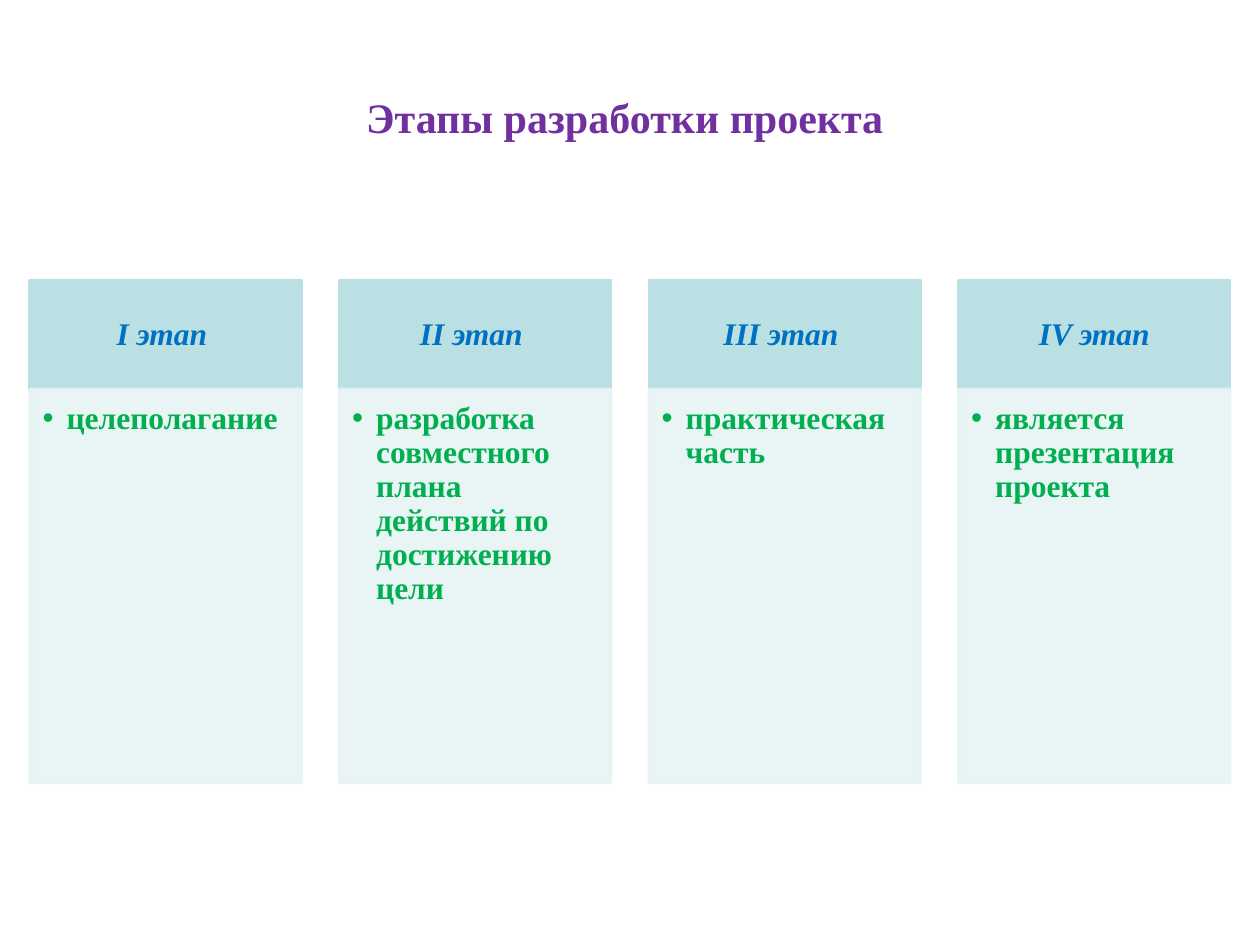
from lxml import etree
from pptx import Presentation
from pptx import util as u
from pptx.dml.color import RGBColor
from pptx.enum import shapes, text
from pptx.oxml.ns import qn

COLORS = {"title": "7030A0", "head": "BBE0E3", "body": "E7F3F4",
          "stage": "0070C0", "detail": "00B050"}
FONT = "Times New Roman"
STAGES = [
    ("I этап ", "целеполагание"),
    ("II этап ", "разработка совместного плана действий по достижению цели"),
    ("III этап ", "практическая часть"),
    (" IV этап ", "является презентация проекта"),
]


def style_runs(p, size, color, italic=None):
    """Format every run of a paragraph as bold text."""
    for r in p.runs:
        r.font.name, r.font.size = FONT, u.Pt(size)
        r.font.bold, r.font.italic = True, italic
        r.font.color.rgb = RGBColor.from_string(COLORS[color])


def set_alpha(sp, percent):
    """Make the fill and the line of a shape partly transparent."""
    for clr in sp._element.spPr.iter(qn("a:srgbClr")):
        etree.SubElement(clr, qn("a:alpha")).set("val", str(percent * 1000))


def add_bullet(p, indent):
    """Give a paragraph a hanging round bullet."""
    pPr = p._p.get_or_add_pPr()
    pPr.set("marL", str(indent))
    pPr.set("indent", str(-indent))
    etree.SubElement(pPr, qn("a:buFont")).set("typeface", "Arial")
    etree.SubElement(pPr, qn("a:buChar")).set("char", "•")


def add_box(s, box, color, insets, words):
    """Add a filled rectangle with text and return it with its paragraph."""
    sp = s.shapes.add_shape(shapes.MSO_SHAPE.RECTANGLE, *map(u.Inches, box))
    sp.shadow.inherit = False
    sp.fill.solid()
    sp.fill.fore_color.rgb = RGBColor.from_string(COLORS[color])
    sp.line.color.rgb = RGBColor.from_string(COLORS[color])
    sp.line.width = u.Pt(2)
    tf = sp.text_frame
    tf.word_wrap = True
    tf.margin_left, tf.margin_top, tf.margin_right, tf.margin_bottom = map(u.Inches, insets)
    tf.text = words
    p = tf.paragraphs[0]
    p.line_spacing = 0.9
    return sp, p


def add_title(s, box, words):
    """Place and format the title placeholder."""
    sp = s.shapes.title
    sp.left, sp.top, sp.width, sp.height = map(u.Inches, box)
    tf = sp.text_frame
    tf.text = words
    tf.vertical_anchor = text.MSO_ANCHOR.MIDDLE
    p = tf.paragraphs[0]
    p.alignment = text.PP_ALIGN.CENTER
    style_runs(p, 24, "title")


def add_stage(s, box, stage, detail, head_height=0.86):
    """Add one stage column: a heading above a bulleted body."""
    left, top, width, height = box
    sp, p = add_box(s, (left, top, width, head_height), "head",
                    (0.14, 0.08, 0.14, 0.08), stage)
    sp.text_frame.vertical_anchor = text.MSO_ANCHOR.MIDDLE
    p.alignment = text.PP_ALIGN.CENTER
    style_runs(p, 18, "stage", italic=True)

    sp, p = add_box(s, (left, top + head_height, width, height - head_height), "body",
                    (0.1, 0.1, 0.14, 0.16), detail)
    set_alpha(sp, 90)
    sp.text_frame.vertical_anchor = text.MSO_ANCHOR.TOP
    p.alignment = text.PP_ALIGN.LEFT
    p.level = 1
    add_bullet(p, u.Inches(0.19))
    style_runs(p, 18, "detail")


def add_stages(s, box, column_width=2.15):
    """Spread the stage columns evenly over the box."""
    left, top, width, height = box
    pitch = (width - column_width) / (len(STAGES) - 1)
    for i, (stage, detail) in enumerate(STAGES):
        add_stage(s, (left + i * pitch, top, column_width, height), stage, detail)


def main():
    """Build the slide and save it."""
    prs = Presentation()
    prs.slide_width, prs.slide_height = u.Inches(10), u.Inches(7.5)
    s = prs.slides.add_slide(prs.slide_layouts[5])
    add_title(s, (0.5, 0.3, 9, 1.25), "Этапы разработки проекта ")
    add_stages(s, (0.24, 2.23, 9.52, 3.98))
    prs.save("out.pptx")


if __name__ == "__main__":
    main()
